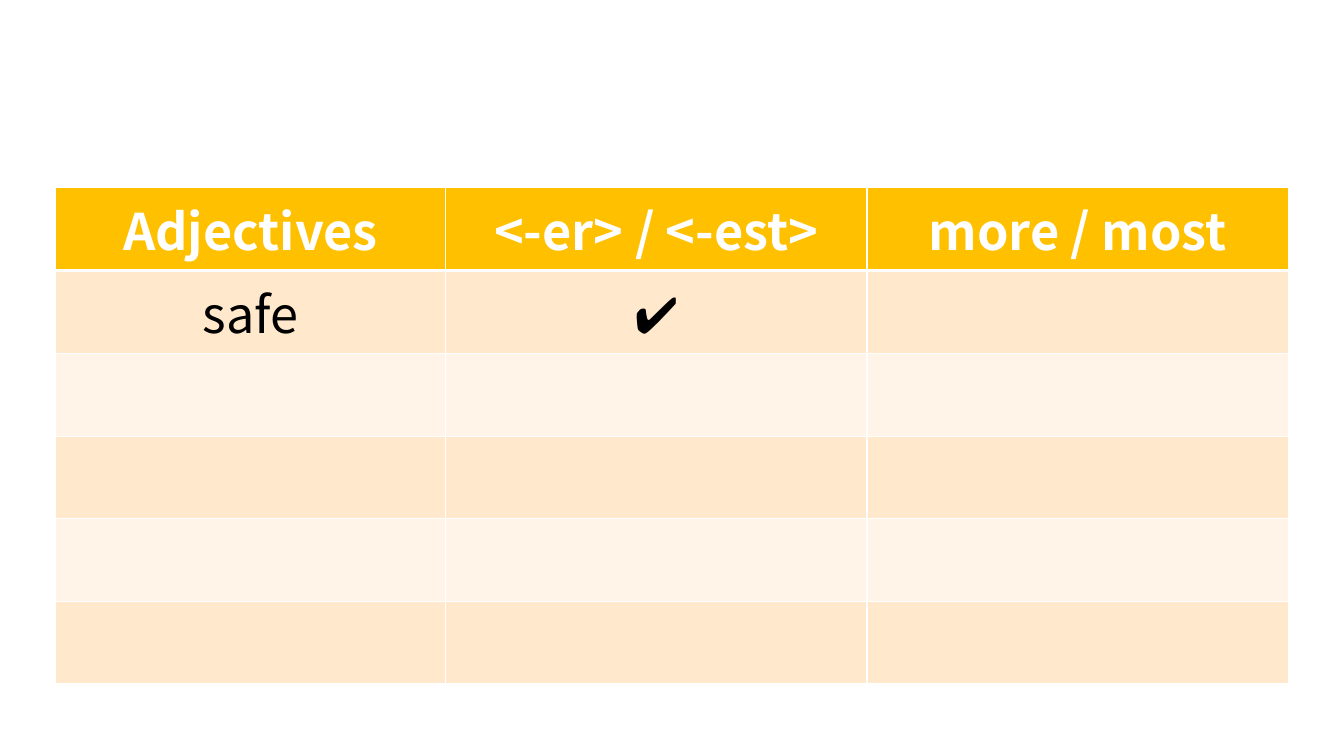
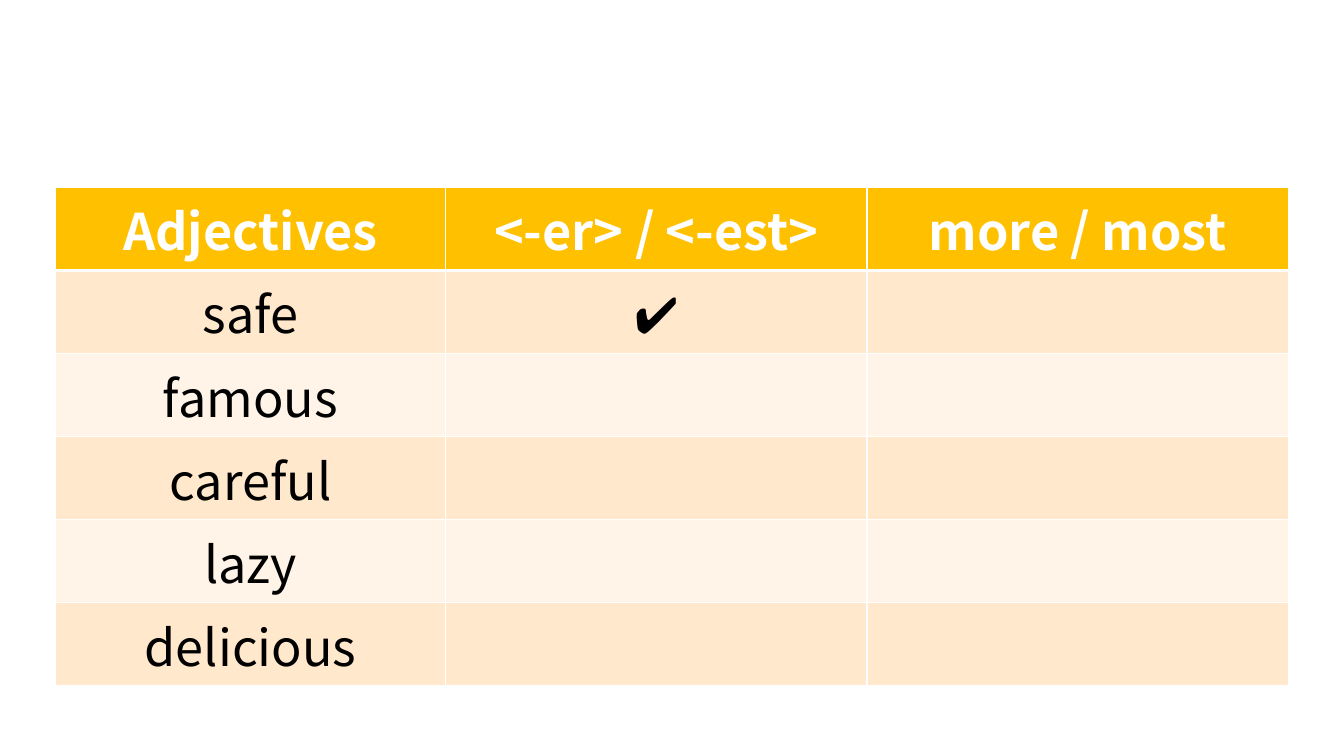
import pptx
import pptx.dml.color
import pptx.enum.text
import pptx.util
from lxml import etree
from pptx.oxml.ns import qn

Inches = pptx.util.Inches
Pt = pptx.util.Pt
RGBColor = pptx.dml.color.RGBColor

WHITE = RGBColor(0xFF, 0xFF, 0xFF)
BLACK = RGBColor(0x00, 0x00, 0x00)
GOLD = RGBColor(0xFF, 0xC0, 0x00)
PEACH = RGBColor(0xFF, 0xE8, 0xCC)
CREAM = RGBColor(0xFF, 0xF4, 0xE7)

FONT = "Noto Sans CJK JP"
HEADER = ["Adjectives", "<-er> / <-est>", "more / most"]
EXAMPLE = ["safe", "✔", ""]
ADJECTIVES = ["famous", "careful", "lazy", "delicious"]
COLUMN_WIDTHS = [3.87, 4.18, 4.18]
ROW_HEIGHT = 0.82


def set_borders(cell, widths):
    properties = cell._tc.get_or_add_tcPr()
    for side, width in widths.items():
        line = etree.SubElement(properties, qn(f"a:ln{side}"), w=str(Pt(width)))
        fill = etree.SubElement(line, qn("a:solidFill"))
        etree.SubElement(fill, qn("a:srgbClr"), val=str(WHITE))


def write_text(cell, text, color, bold):
    paragraph = cell.text_frame.paragraphs[0]
    paragraph.alignment = pptx.enum.text.PP_ALIGN.CENTER
    run = paragraph.add_run()
    run.text = text
    for name, value in {"name": FONT, "size": Pt(36), "bold": bold}.items():
        setattr(run.font, name, value)
    run.font.color.rgb = color
    etree.SubElement(run._r.get_or_add_rPr(), qn("a:ea"), typeface=FONT)


presentation = pptx.Presentation()
presentation.slide_width = Inches(13.33)
presentation.slide_height = Inches(7.5)

for adjectives in ([""] * len(ADJECTIVES), ADJECTIVES):
    slide = presentation.slides.add_slide(presentation.slide_layouts[6])
    rows = [HEADER, EXAMPLE] + [[adjective, "", ""] for adjective in adjectives]
    table = slide.shapes.add_table(
        len(rows), len(HEADER), Inches(0.55), Inches(1.86),
        Inches(sum(COLUMN_WIDTHS)), Inches(ROW_HEIGHT * len(rows)),
    ).table
    for column, width in zip(table.columns, COLUMN_WIDTHS):
        column.width = Inches(width)

    for row_index, texts in enumerate(rows):
        is_header = row_index == 0
        borders = {"L": 1, "R": 1, "T": 3 if row_index == 1 else 1, "B": 3 if is_header else 1}
        background = GOLD if is_header else (CREAM, PEACH)[row_index % 2]
        for column_index, text in enumerate(texts):
            cell = table.cell(row_index, column_index)
            set_borders(cell, borders)
            cell.fill.solid()
            cell.fill.fore_color.rgb = background
            if text:
                write_text(cell, text, WHITE if is_header else BLACK, is_header)

presentation.save("out.pptx")
